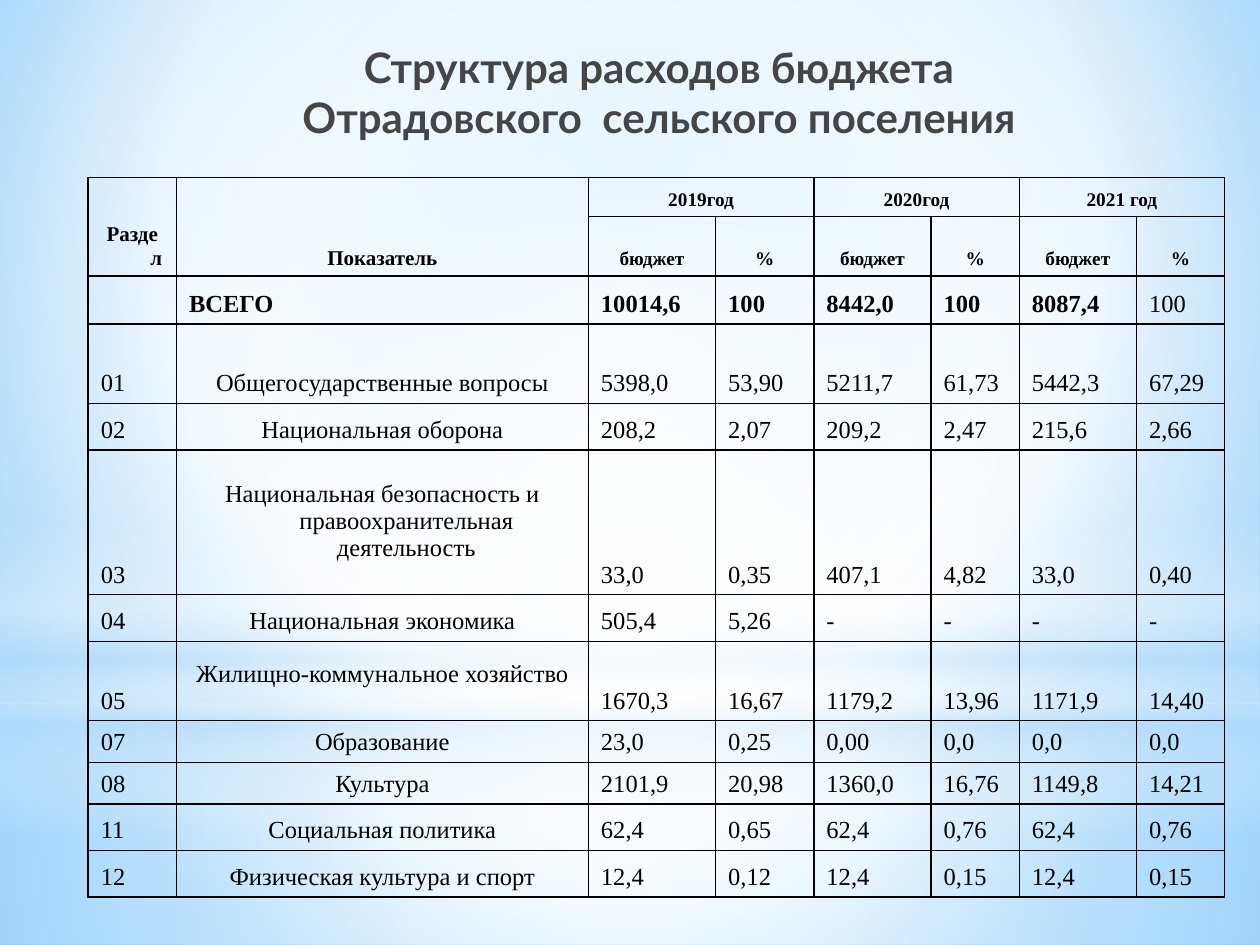
from lxml import etree
from pptx import Presentation
from pptx.dml.color import RGBColor
from pptx.enum.shapes import MSO_SHAPE
from pptx.enum.text import MSO_ANCHOR, MSO_AUTO_SIZE, PP_ALIGN
from pptx.oxml.ns import qn
from pptx.util import Inches, Pt

RECT, OVAL = MSO_SHAPE.RECTANGLE, MSO_SHAPE.OVAL
CENTER, LEFT = PP_ALIGN.CENTER, PP_ALIGN.LEFT
TOP, BOTTOM = MSO_ANCHOR.TOP, MSO_ANCHOR.BOTTOM
NO_FIT = MSO_AUTO_SIZE.NONE

TITLE = "Структура расходов бюджета\vОтрадовского  сельского поселения"
YEARS = ["2019год", "2020год", "2021 год"]
TOTAL = ["", "ВСЕГО", "10014,6", "100", "8442,0", "100", "8087,4", "100"]
SECTIONS = [
    ["01", "Общегосударственные вопросы", "5398,0", "53,90", "5211,7", "61,73", "5442,3", "67,29"],
    ["02", "Национальная оборона", "208,2", "2,07", "209,2", "2,47", "215,6", "2,66"],
    ["03", "Национальная безопасность и правоохранительная деятельность",
     "33,0", "0,35", "407,1", "4,82", "33,0", "0,40"],
    ["04", "Национальная экономика", "505,4", "5,26", "-", "-", "-", "-"],
    ["05", "Жилищно-коммунальное хозяйство", "1670,3", "16,67", "1179,2", "13,96", "1171,9", "14,40"],
    ["07", "Образование", "23,0", "0,25", "0,00", "0,0", "0,0", "0,0"],
    ["08", "Культура", "2101,9", "20,98", "1360,0", "16,76", "1149,8", "14,21"],
    ["11", "Социальная политика", "62,4", "0,65", "62,4", "0,76", "62,4", "0,76"],
    ["12", "Физическая культура и спорт", "12,4", "0,12", "12,4", "0,15", "12,4", "0,15"],
]
RAISED = {"03", "05"}
COLS = [0.7, 3.27, 1.01, 0.78, 0.93, 0.7, 0.93, 0.7]
ROWS = [0.31, 0.31, 0.37, 0.63, 0.37, 1.15, 0.37, 0.63, 0.33, 0.33, 0.37, 0.37]

MIDDLE = (50, 50, 50, 50)
BACKGROUND = [(0, "9ED5FF", 100), (60, "FFFFFF", 100), (100, "5BB9FF", 100)]
LAYERS = [
    (RECT, (0, 5.58, 10, 1.92), [(0, "FFFFFF", 91), (37, "FFFFFF", 76), (100, "B4DCFA", 79)], MIDDLE),
    (RECT, (0, 0, 10, 5.58), [(0, "FFFFFF", 89), (48, "FFFFFF", 62), (100, "B4DCFA", 79)], MIDDLE),
    (RECT, (0, 4.12, 10, 2.5), [(0, "FFFFFF", 0), (29, "FFFFFF", 30), (45, "B4DCFA", 40),
                                (55, "FFFFFF", 26), (65, "B4DCFA", 60), (100, "FFFFFF", 0)], None),
    (OVAL, (0, 1.75, 10, 5.58), [(0, "FFFFFF", 100), (56, "FFFFFF", 0)], MIDDLE),
]


def sub(parent, tag, **attrs):
    """Add a child element with the given attributes."""
    return etree.SubElement(parent, qn(tag), {k: str(v) for k, v in attrs.items()})


def rgb(color):
    """Turn a hex string into a colour."""
    return RGBColor.from_string(color)


def paint_gradient(fill, owner, stops, focus):
    """Fill with a circular gradient around focus, or a vertical one without it."""
    fill.solid()
    old = owner.xpath(".//a:solidFill")[0]
    grad = etree.Element(qn("a:gradFill"), rotWithShape="1")
    stop_list = sub(grad, "a:gsLst")
    for pos, color, opacity in stops:
        stop = sub(stop_list, "a:gs", pos=pos * 1000)
        sub(sub(stop, "a:srgbClr", val=color), "a:alpha", val=opacity * 1000)
    if focus:
        sides = {side: v * 1000 for side, v in zip("ltrb", focus)}
        sub(sub(grad, "a:path", **{"path": "circle"}), "a:fillToRect", **sides)
    else:
        sub(grad, "a:lin", ang=90 * 60000, scaled=0)
    old.getparent().replace(old, grad)


def write(p, text, align, color, **fmt):
    """Write one aligned paragraph with font formats."""
    p.alignment = align
    for i, line in enumerate(text.split("\v")):
        if i:
            p.add_line_break()
        r = p.add_run()
        r.text = line
        r.font.color.rgb = rgb(color)
        for name, value in fmt.items():
            setattr(r.font, name, value)


def format_cell(cell):
    """Give a cell black borders, no fill and bottom anchoring."""
    cell.fill.background()
    cell.vertical_anchor = BOTTOM
    tc_pr = cell._tc.get_or_add_tcPr()
    for i, side in enumerate(("a:lnL", "a:lnR", "a:lnT", "a:lnB")):
        ln = sub(tc_pr, side, w=Pt(1))
        sub(sub(ln, "a:solidFill"), "a:srgbClr", val="000000")
        tc_pr.insert(i, ln)


def put(table, row, col, text, size, bold=False, align=LEFT):
    """Write a table cell with a hanging indent."""
    p = table.cell(row, col).text_frame.paragraphs[0]
    p_pr = p._p.get_or_add_pPr()
    for name, value in {"marL": Inches(0.38), "indent": -Inches(0.38)}.items():
        p_pr.set(name, str(value))
    write(p, text, align, "000000", name="Times New Roman", size=Pt(size), bold=bold)


def add_backdrop(prs, s):
    """Put the gradient background and its layers on the master."""
    master = prs.slide_master
    paint_gradient(master.background.fill, master._element, BACKGROUND, (20, 10, 20, 60))
    for kind, box, stops, focus in LAYERS:
        sp = s.shapes.add_shape(kind, *map(Inches, box))
        sp.shadow.inherit = False
        sp.line.fill.background()
        paint_gradient(sp.fill, sp._element, stops, focus)
        master.shapes._spTree.append(sp._element)


def add_title(s):
    """Place and format the title."""
    title = s.shapes.title
    box = map(Inches, (0.98, 0.28, 8.5, 1.25))
    for name, value in zip(("left", "top", "width", "height"), box):
        setattr(title, name, value)
    tf = title.text_frame
    for name, value in {"word_wrap": True, "auto_size": NO_FIT, "vertical_anchor": TOP}.items():
        setattr(tf, name, value)
    write(tf.paragraphs[0], TITLE, CENTER, "454545", name="Lato", size=Pt(24), bold=True)


def add_budget_table(s):
    """Build the table of spending by section and year."""
    box = map(Inches, (0.7, 1.41, sum(COLS), sum(ROWS)))
    table = s.shapes.add_table(len(ROWS), len(COLS), *box).table
    table.first_row = table.horz_banding = False
    for column, width in zip(table.columns, COLS):
        column.width = Inches(width)
    for row, height in zip(table.rows, ROWS):
        row.height = Inches(height)
    for cell in table.iter_cells():
        format_cell(cell)

    for col, text in enumerate(("Раздел", "Показатель")):
        table.cell(0, col).merge(table.cell(1, col))
        put(table, 0, col, text, 12, True, CENTER)
    for i, year in enumerate(YEARS):
        col = 2 + 2 * i
        table.cell(0, col).merge(table.cell(0, col + 1))
        put(table, 0, col, year, 11, True, CENTER)
        put(table, 1, col, "бюджет", 11, True, CENTER)
        put(table, 1, col + 1, "%", 11, True, CENTER)

    for col, text in enumerate(TOTAL):
        put(table, 2, col, text, 14, col < len(TOTAL) - 1)
    for row, values in enumerate(SECTIONS, 3):
        for col, text in enumerate(values):
            put(table, row, col, text, 14, align=CENTER if col == 1 else LEFT)
        if values[0] in RAISED:
            table.cell(row, 1).margin_bottom = Inches(0.26)


def main():
    """Build and save the slide."""
    prs = Presentation()
    prs.slide_width, prs.slide_height = Inches(10), Inches(7.5)
    s = prs.slides.add_slide(prs.slide_layouts[5])
    add_backdrop(prs, s)
    add_title(s)
    add_budget_table(s)
    prs.save("out.pptx")


if __name__ == "__main__":
    main()
